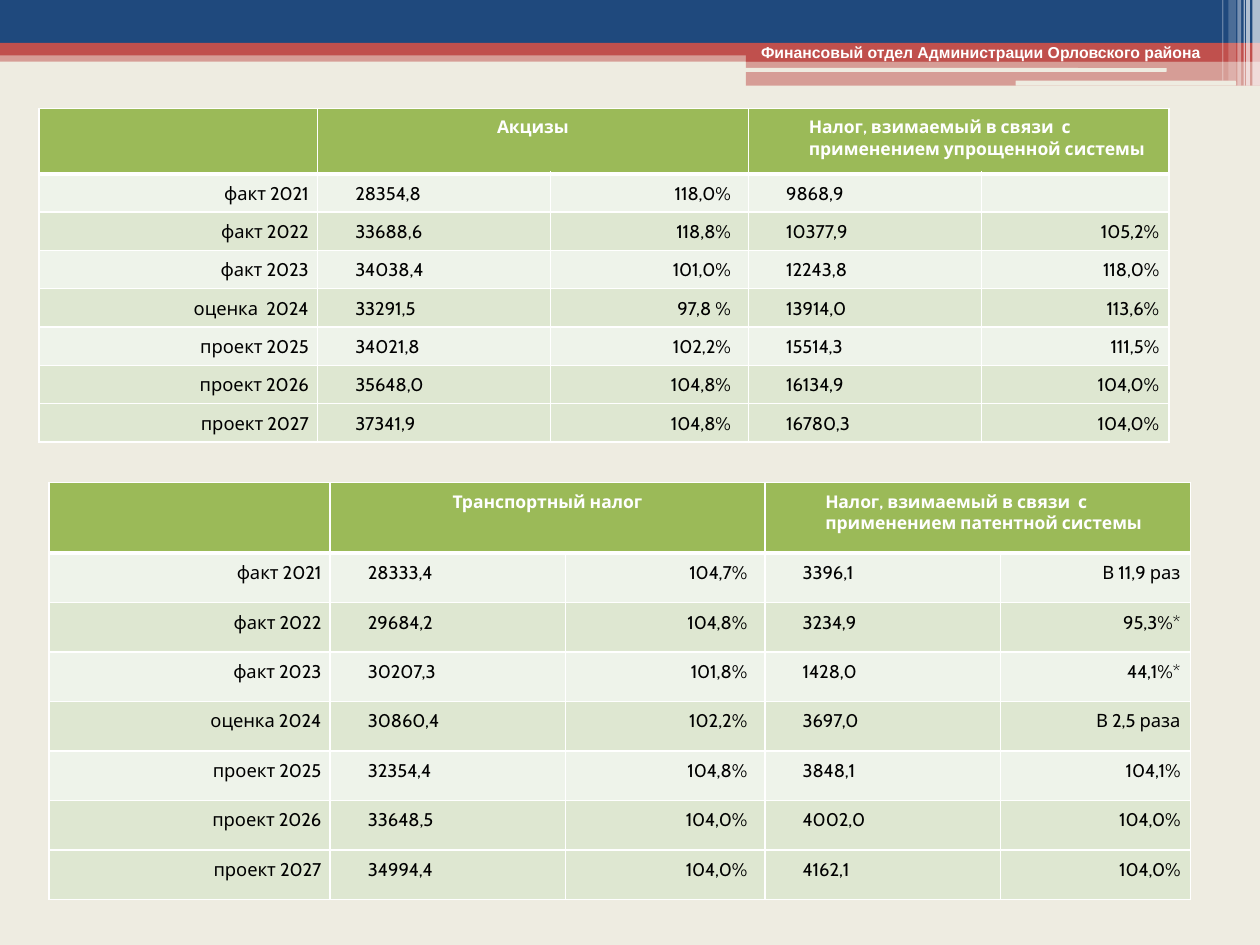
from pptx import Presentation, util as u
from pptx.dml.color import RGBColor
from pptx.enum import shapes, text
from pptx.oxml.ns import qn
from lxml import etree

HUES = {"paper": "EEECE1", "navy": "1F497D", "red": "C0504D", "white": "FFFFFF",
        "black": "000000", "green": "9BBA58", "light": "EEF3EA", "dark": "DEE7D1"}
RECT = shapes.MSO_SHAPE.RECTANGLE
ROUND = shapes.MSO_SHAPE.ROUNDED_RECTANGLE
LEFT, MID, RIGHT = text.PP_ALIGN.LEFT, text.PP_ALIGN.CENTER, text.PP_ALIGN.RIGHT
# Left inset, right inset and alignment of each body column
BODY = [(0, 0.07, RIGHT), (0.3, 0, LEFT), (0, 0.14, RIGHT), (0.3, 0, LEFT), (0, 0.08, RIGHT)]


class Page:
    """Holds the slide and its style."""

    def __init__(self, deck):
        self.slide = deck.slides.add_slide(deck.layouts[5] if hasattr(deck, "layouts")
                                           else deck.slide_layouts[5])
        self.shapes = self.slide.shapes
        self.paint(self.slide.background.fill, "paper")

    def paint(self, fill, hue):
        fill.solid()
        fill.fore_color.rgb = RGBColor.from_string(HUES[hue])

    def type(self, para, size, hue, bold, face="Cabin"):
        font = para.font
        font.name, font.size, font.bold = face, u.Pt(size), bold
        font.color.rgb = RGBColor.from_string(HUES[hue])

    def bar(self, box, hue, alpha=100, kind=RECT):
        bar = self.shapes.add_shape(kind, *map(u.Inches, box))
        bar.shadow.inherit = False
        bar.line.fill.background()
        self.paint(bar.fill, hue)
        if alpha < 100:
            tint = bar.fill._xPr.find(qn("a:solidFill"))[0]
            etree.SubElement(tint, qn("a:alpha"), val=str(alpha * 1000))

    def title(self, words, box):
        head = self.shapes.title
        head.left, head.top, head.width, head.height = map(u.Inches, box)
        frame = head.text_frame
        frame.text = words
        frame.auto_size = text.MSO_AUTO_SIZE.NONE
        frame.word_wrap = True
        frame.vertical_anchor = text.MSO_ANCHOR.MIDDLE
        para = frame.paragraphs[0]
        para.alignment = LEFT
        self.type(para, 9, "white", True, "Arial")
        self.shapes._spTree.append(head._element)  # in front of the bars

    def edge(self, cell, top=1, low=1):
        """Draw white borders, with the given top and bottom widths."""
        props = cell._tc.get_or_add_tcPr()
        for side, width in zip("LRTB", (1, 1, top, low)):
            line = etree.SubElement(props, qn("a:ln" + side), w=str(u.Pt(width)))
            fill = etree.SubElement(line, qn("a:solidFill"))
            etree.SubElement(fill, qn("a:srgbClr"), val=HUES["white"])

    def cell(self, cell, words, fill, look, head=False, top=1):
        left, right, align = look
        self.edge(cell, top, 3 if head else 1)
        self.paint(cell.fill, fill)
        cell.margin_left, cell.margin_right = u.Inches(left), u.Inches(right)
        cell.margin_top, cell.margin_bottom = u.Inches(0.07 if words else 0), 0
        cell.text = words
        para = cell.text_frame.paragraphs[0]
        para.alignment = align
        self.type(para, 10 if head else 10.5, "white" if head else "black", head)

    def table(self, box, cols, tall, heads, rows):
        """Place a table whose header row is tall and whose other rows are equal."""
        grid = self.shapes.add_table(len(rows) + 1, len(cols), *map(u.Inches, box)).table
        for col, wide in zip(grid.columns, cols):
            col.width = u.Inches(wide)
        for i, row in enumerate(grid.rows):
            row.height = u.Inches((box[3] - tall) / len(rows) if i else tall)
        looks = [(0, 0, LEFT), (0, 0, MID), (0, 0, MID), (0.48, 0, LEFT), (0, 0, LEFT)]
        for c, look in enumerate(looks):
            self.cell(grid.cell(0, c), heads.get(c, ""), "green", look, head=True)
        for c in heads:
            grid.cell(0, c).merge(grid.cell(0, c + 1))
        for r, row in enumerate(rows, 1):
            hue = "light" if r % 2 and r < len(rows) else "dark"
            for c, words in enumerate(row):
                self.cell(grid.cell(r, c), words, hue, BODY[c], top=3 if r == 1 else 1)


def main():
    deck = Presentation()
    deck.slide_width, deck.slide_height = u.Inches(10), u.Inches(7.5)
    page = Page(deck)

    page.bar((0, 0.4, 10, 0.09), "red", 50)
    page.bar((0, 0, 10, 0.34), "navy")
    page.bar((0, 0.34, 10, 0.1), "red")
    page.bar((5.92, 0.39, 4.08, 0.1), "red")
    page.bar((5.92, 0.48, 4.08, 0.2), "red", 50)
    page.bar((5.91, 0.54, 3.35, 0.03), "paper", kind=ROUND)
    page.bar((8.06, 0.64, 1.75, 0.04), "paper", kind=ROUND)
    for left, wide, high, alpha in [(9.94, 0.06, 0.68, 65), (9.89, 0.03, 0.68, 65),
                                    (9.87, 0.01, 0.68, 60), (9.82, 0.03, 0.68, 40),
                                    (9.75, 0.06, 0.64, 20), (9.7, 0.01, 0.64, 30)]:
        page.bar((left, 0, wide, high), "white", alpha)
    page.title("Финансовый отдел Администрации Орловского района", (5.94, 0.29, 3.91, 0.25))

    page.table((0.31, 0.86, 8.98, 2.65), (2.21, 1.85, 1.57, 1.85, 1.49), 0.52,
               {1: "Акцизы", 3: "Налог, взимаемый в связи  с применением упрощенной системы"},
               [("факт 2021", "28354,8", "118,0%", "9868,9", ""),
                ("факт 2022", "33688,6", "118,8%", "10377,9", "105,2%"),
                ("факт 2023", "34038,4", "101,0%", "12243,8", "118,0%"),
                ("оценка  2024", "33291,5", "97,8 %", "13914,0", "113,6%"),
                ("проект 2025", "34021,8", "102,2%", "15514,3", "111,5%"),
                ("проект 2026", "35648,0", "104,8%", "16134,9", "104,0%"),
                ("проект 2027", "37341,9", "104,8%", "16780,3", "104,0%")])
    page.table((0.39, 3.83, 9.06, 3.31), (2.23, 1.87, 1.58, 1.87, 1.51), 0.56,
               {1: "Транспортный налог",
                3: "Налог, взимаемый в связи  с применением патентной системы"},
               [("факт 2021", "28333,4", "104,7%", "3396,1", "В 11,9 раз"),
                ("факт 2022", "29684,2", "104,8%", "3234,9", "95,3%*"),
                ("факт 2023", "30207,3", "101,8%", "1428,0", "44,1%*"),
                ("оценка 2024", "30860,4", "102,2%", "3697,0", "В 2,5 раза"),
                ("проект 2025", "32354,4", "104,8%", "3848,1", "104,1%"),
                ("проект 2026", "33648,5", "104,0%", "4002,0", "104,0%"),
                ("проект 2027", "34994,4", "104,0%", "4162,1", "104,0%")])
    deck.save("out.pptx")


if __name__ == "__main__":
    main()
